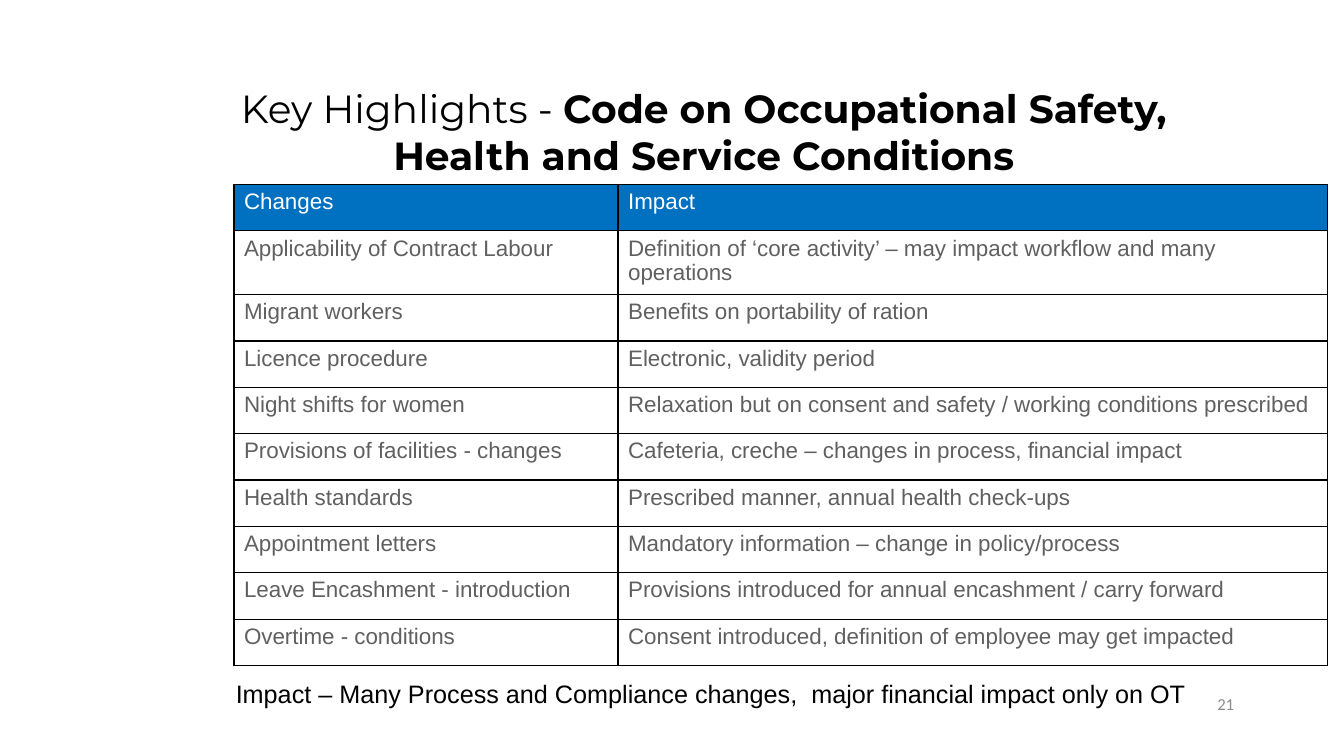
from dataclasses import dataclass

from lxml import etree
from pptx import Presentation, util as u
from pptx.dml.color import RGBColor
from pptx.enum import text as t
from pptx.oxml.ns import qn


@dataclass(frozen=True)
class Theme:
    black: str = "000000"
    white: str = "FFFFFF"
    header_blue: str = "0070C0"
    body_grey: str = "606060"
    number_grey: str = "8C8C8C"
    heading_font: str = "Montserrat"
    body_font: str = "Arial"
    number_font: str = "Calibri"
    title_size: int = 28
    table_size: int = 16
    closing_size: int = 18
    number_size: int = 12
    border_width: int = 1


@dataclass(frozen=True)
class Change:
    topic: str
    impact: str


@dataclass(frozen=True)
class Box:
    left: float
    top: float
    width: float
    height: float

    def lengths(self) -> tuple:
        return tuple(u.Inches(v) for v in (self.left, self.top, self.width, self.height))


THEME = Theme()
TABLE_BOX = Box(2.32, 1.83, 10.85, 4.6)
COLUMN_WIDTHS = (3.81, 7.04)

CHANGES = (
    Change("Changes", "Impact"),
    Change("Applicability of Contract Labour",
           "Definition of ‘core activity’ – may impact workflow and many operations"),
    Change("Migrant workers", "Benefits on portability of ration"),
    Change("Licence procedure", "Electronic, validity period"),
    Change("Night shifts for women",
           "Relaxation but on consent and safety / working conditions prescribed"),
    Change("Provisions of facilities - changes",
           "Cafeteria, creche – changes in process, financial impact"),
    Change("Health standards", "Prescribed manner, annual health check-ups"),
    Change("Appointment letters", "Mandatory information – change in policy/process"),
    Change("Leave Encashment - introduction",
           "Provisions introduced for annual encashment / carry forward"),
    Change("Overtime - conditions",
           "Consent introduced, definition of employee may get impacted"),
)


def write(paragraph, wording: str, *, size: int, font: str, color: str,
          bold: bool = False, align=t.PP_ALIGN.LEFT) -> None:
    """Add one formatted run to a paragraph."""
    paragraph.alignment = align
    run = paragraph.add_run()
    run.text = wording
    run.font.size = u.Pt(size)
    run.font.name = font
    run.font.bold = bold
    run.font.color.rgb = RGBColor.from_string(color)


def add_text_frame(slide, box: Box):
    frame = slide.shapes.add_textbox(*box.lengths()).text_frame
    frame.word_wrap = True
    return frame


def set_borders(cell) -> None:
    """Draw all four sides; border elements go before the cell fill."""
    properties = cell._tc.get_or_add_tcPr()
    for position, side in enumerate(("a:lnL", "a:lnR", "a:lnT", "a:lnB")):
        line = etree.Element(qn(side), w=str(u.Pt(THEME.border_width)))
        fill = etree.SubElement(line, qn("a:solidFill"))
        etree.SubElement(fill, qn("a:srgbClr"), val=THEME.black)
        properties.insert(position, line)


def add_changes_table(slide) -> None:
    table = slide.shapes.add_table(
        len(CHANGES), len(COLUMN_WIDTHS), *TABLE_BOX.lengths()).table
    table.first_row = table.horz_banding = False
    for column, width in zip(table.columns, COLUMN_WIDTHS):
        column.width = u.Inches(width)
    for row, change in enumerate(CHANGES):
        is_header = row == 0
        for column, wording in enumerate((change.topic, change.impact)):
            cell = table.cell(row, column)
            if is_header:
                cell.fill.solid()
                cell.fill.fore_color.rgb = RGBColor.from_string(THEME.header_blue)
            else:
                cell.fill.background()
            set_borders(cell)
            write(cell.text_frame.paragraphs[0], wording, size=THEME.table_size,
                  font=THEME.body_font,
                  color=THEME.white if is_header else THEME.body_grey)


def main() -> None:
    deck = Presentation()
    deck.slide_width, deck.slide_height = u.Inches(13.33), u.Inches(7.5)
    slide = deck.slides.add_slide(deck.slide_layouts[6])

    # Title, standing on the table
    title = add_text_frame(slide, Box(2.06, 1.17, 9.84, 0.7))
    title.vertical_anchor = t.MSO_ANCHOR.BOTTOM
    title.margin_bottom = u.Inches(0.1)
    for wording, bold in (
            ("Key Highlights - ", False),
            ("Code on Occupational Safety, Health and Service Conditions", True)):
        write(title.paragraphs[0], wording, size=THEME.title_size,
              font=THEME.heading_font, color=THEME.black, bold=bold,
              align=t.PP_ALIGN.CENTER)

    # Changes and their impact
    add_changes_table(slide)

    # Slide number
    number = add_text_frame(slide, Box(9.56, 6.83, 2.78, 0.5))
    number.vertical_anchor = t.MSO_ANCHOR.TOP
    write(number.paragraphs[0], "21", size=THEME.number_size, font=THEME.number_font,
          color=THEME.number_grey, align=t.PP_ALIGN.RIGHT)

    # Closing line
    closing = add_text_frame(slide, Box(2.24, 6.68, 10.94, 0.4))
    write(closing.paragraphs[0],
          "Impact – Many Process and Compliance changes,  major financial impact only on OT",
          size=THEME.closing_size, font=THEME.body_font, color=THEME.black)

    deck.save("out.pptx")


if __name__ == "__main__":
    main()
